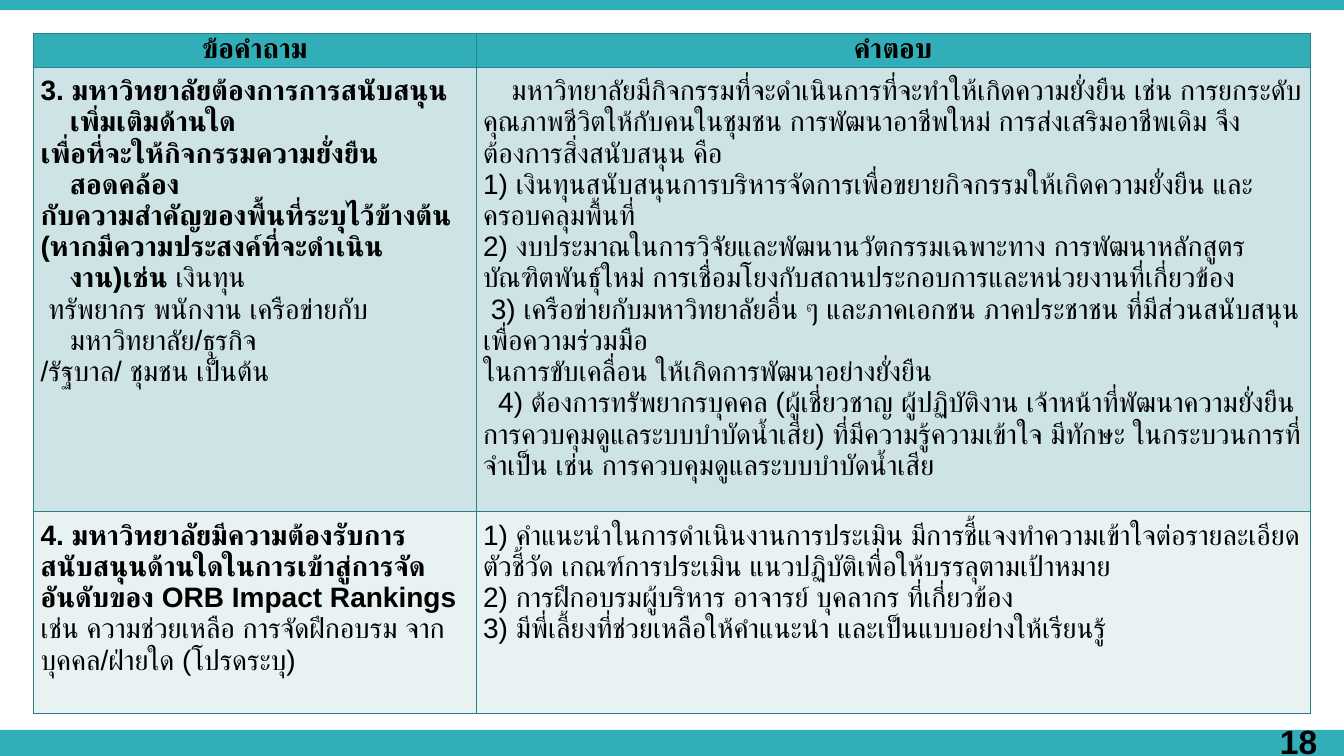
from lxml.etree import SubElement
from pptx import Presentation
from pptx.dml.color import RGBColor
from pptx.enum.lang import MSO_LANGUAGE_ID
from pptx.enum.shapes import MSO_SHAPE
from pptx.enum.text import MSO_ANCHOR, PP_ALIGN
from pptx.oxml.ns import qn
from pptx.util import Inches, Pt

COLOURS = {
    "teal": "32AEB8",
    "edge": "25838A",
    "tint": "CEE3E6",
    "pale": "E8F2F3",
    "ink": "000000",
}
COLUMNS, ROWS = 40, 22.5
HANGING = (0.29, -0.29)
HEADER = {"alignment": PP_ALIGN.CENTER, "line_spacing": 0.9, "space_after": Pt(8)}
HEADER_CELL = {"vertical_anchor": MSO_ANCHOR.MIDDLE, "margin_top": 0}
BODY_CELL = {"vertical_anchor": MSO_ANCHOR.TOP, "margin_top": Inches(0.08)}
SIDES = {"margin_left": Inches(0.07), "margin_right": Inches(0.07), "margin_bottom": 0}

HEADINGS = ["ข้อคำถาม", "คำตอบ"]
SUPPORT_QUESTION = [
    (HANGING, [("3. มหาวิทยาลัยต้องการการสนับสนุนเพิ่มเติมด้านใด", True)]),
    (HANGING, [("เพื่อที่จะให้กิจกรรมความยั่งยืนสอดคล้อง", True)]),
    (HANGING, [("กับความสำคัญของพื้นที่ระบุไว้ข้างต้น", True)]),
    (HANGING, [("(หากมีความประสงค์ที่จะดำเนินงาน)เช่น ", True), ("เงินทุน", False)]),
    (HANGING, [(" ทรัพยากร พนักงาน เครือข่ายกับมหาวิทยาลัย/ธุรกิจ", False)]),
    (HANGING, [("/รัฐบาล/ ชุมชน เป็นต้น", False)]),
]
SUPPORT_ANSWER = [
    ((0, 0.28), [("มหาวิทยาลัยมีกิจกรรมที่จะดำเนินการที่จะทำให้เกิดความยั่งยืน เช่น การยกระดับคุณภาพชีวิตให้กับคนในชุมชน การพัฒนาอาชีพใหม่ การส่งเสริมอาชีพเดิม จึงต้องการสิ่งสนับสนุน คือ", False)]),
    ((0, 0), [("1) เงินทุนสนับสนุนการบริหารจัดการเพื่อขยายกิจกรรมให้เกิดความยั่งยืน และครอบคลุมพื้นที่", False)]),
    ((0, 0), [("2) งบประมาณในการวิจัยและพัฒนานวัตกรรมเฉพาะทาง การพัฒนาหลักสูตรบัณฑิตพันธุ์ใหม่ การเชื่อมโยงกับสถานประกอบการและหน่วยงานที่เกี่ยวข้อง", False)]),
    ((0, 0), [(" 3) เครือข่ายกับมหาวิทยาลัยอื่น ๆ และภาคเอกชน ภาคประชาชน ที่มีส่วนสนับสนุนเพื่อความร่วมมือ", False)]),
    ((0, 0), [("ในการขับเคลื่อน ให้เกิดการพัฒนาอย่างยั่งยืน", False)]),
    ((0, 0.15), [("4) ต้องการทรัพยากรบุคคล (ผู้เชี่ยวชาญ ผู้ปฏิบัติงาน เจ้าหน้าที่พัฒนาความยั่งยืน การควบคุมดูแลระบบบำบัดน้ำเสีย) ที่มีความรู้ความเข้าใจ มีทักษะ ในกระบวนการที่จำเป็น เช่น การควบคุมดูแลระบบบำบัดน้ำเสีย", False)]),
]
RANKING_QUESTION = [
    ((0, 0), [
        ("4. มหาวิทยาลัยมีความต้องรับการสนับสนุนด้านใดในการเข้าสู่การจัดอันดับของ ORB Impact Rankings ", True),
        ("เช่น ความช่วยเหลือ การจัดฝึกอบรม จากบุคคล/ฝ่ายใด (โปรดระบุ)", False),
    ]),
]
RANKING_ANSWER = [
    ((0, 0), [("1) คำแนะนำในการดำเนินงานการประเมิน มีการชี้แจงทำความเข้าใจต่อรายละเอียดตัวชี้วัด เกณฑ์การประเมิน แนวปฏิบัติเพื่อให้บรรลุตามเป้าหมาย", False)]),
    ((0, 0), [("2) การฝึกอบรมผู้บริหาร อาจารย์ บุคลากร ที่เกี่ยวข้อง", False)]),
    ((0, 0), [("3) มีพี่เลี้ยงที่ช่วยเหลือให้คำแนะนำ และเป็นแบบอย่างให้เรียนรู้", False)]),
]


def apply(target, values):
    for name, value in values.items():
        setattr(target, name, value)


class QuestionPage:
    """Draws styled elements on one slide, placed by grid columns and rows."""

    def __init__(self, deck):
        self.page = deck.slides.add_slide(deck.slide_layouts[6])
        self.column = deck.slide_width / COLUMNS
        self.row = deck.slide_height / ROWS
        self.font = "Arial"

    def place(self, left, top, width, height):
        return (round(left * self.column), round(top * self.row),
                round(width * self.column), round(height * self.row))

    def bar(self, top, height):
        band = self.page.shapes.add_shape(
            MSO_SHAPE.RECTANGLE, *self.place(0, top, COLUMNS, height))
        band.shadow.inherit = False
        band.fill.solid()
        band.fill.fore_color.rgb = RGBColor.from_string(COLOURS["teal"])
        band.line.fill.background()

    def fill_text(self, frame, paragraphs, size=20, layout=None):
        for index, (indent, spans) in enumerate(paragraphs):
            para = frame.add_paragraph() if index else frame.paragraphs[0]
            apply(para, layout or {})
            properties = para._p.get_or_add_pPr()
            for name, value in zip(("marL", "indent"), indent):
                properties.set(name, str(Inches(value)))
            for text, bold in spans:
                span = para.add_run()
                span.text = text
                apply(span.font, {"size": Pt(size), "bold": bold, "name": self.font,
                                  "language_id": MSO_LANGUAGE_ID.THAI})
                span.font.color.rgb = RGBColor.from_string(COLOURS["ink"])
                SubElement(span._r.get_or_add_rPr(), qn("a:cs"), typeface=self.font)

    def label(self, area, text, size):
        box = self.page.shapes.add_textbox(*self.place(*area))
        box.text_frame.word_wrap = True
        self.fill_text(box.text_frame, [((0, 0), [(text, True)])], size,
                       {"alignment": PP_ALIGN.RIGHT})

    def border(self, cell):
        properties = cell._tc.get_or_add_tcPr()
        for side in ("lnL", "lnR", "lnT", "lnB"):
            line = SubElement(properties, qn(f"a:{side}"), w=str(Pt(0.75)))
            fill = SubElement(line, qn("a:solidFill"))
            SubElement(fill, qn("a:srgbClr"), val=COLOURS["edge"])

    def cell(self, cell, paragraphs, fill, values, layout):
        apply(cell, {**SIDES, **values})
        self.border(cell)
        cell.fill.solid()
        cell.fill.fore_color.rgb = RGBColor.from_string(COLOURS[fill])
        self.fill_text(cell.text_frame, paragraphs, layout=layout)

    def table(self, left, top, widths, heights, lines):
        area = self.place(left, top, sum(widths), sum(heights))
        table = self.page.shapes.add_table(len(heights), len(widths), *area).table
        apply(table, {"first_row": False, "horz_banding": False})
        for column, width in zip(table.columns, widths):
            column.width = round(width * self.column)
        for row, height in zip(table.rows, heights):
            row.height = round(height * self.row)
        for row, (fill, values, layout, contents) in zip(table.rows, lines):
            for cell, paragraphs in zip(row.cells, contents):
                self.cell(cell, paragraphs, fill, values, layout)


def main():
    deck = Presentation()
    apply(deck, {"slide_width": Inches(13.33), "slide_height": Inches(7.5)})
    page = QuestionPage(deck)
    page.bar(21.72, 0.78)
    page.bar(0, 0.3)
    headings = [[((0, 0), [(text, True)])] for text in HEADINGS]
    page.table(1, 1, [13.17, 24.83], [1, 13.23, 6], [
        ("teal", HEADER_CELL, HEADER, headings),
        ("tint", BODY_CELL, {}, [SUPPORT_QUESTION, SUPPORT_ANSWER]),
        ("pale", BODY_CELL, {}, [RANKING_QUESTION, RANKING_ANSWER]),
    ])
    page.label((37.25, 21.3, 2.25, 1.2), "18", 24)
    deck.save("out.pptx")


if __name__ == "__main__":
    main()
